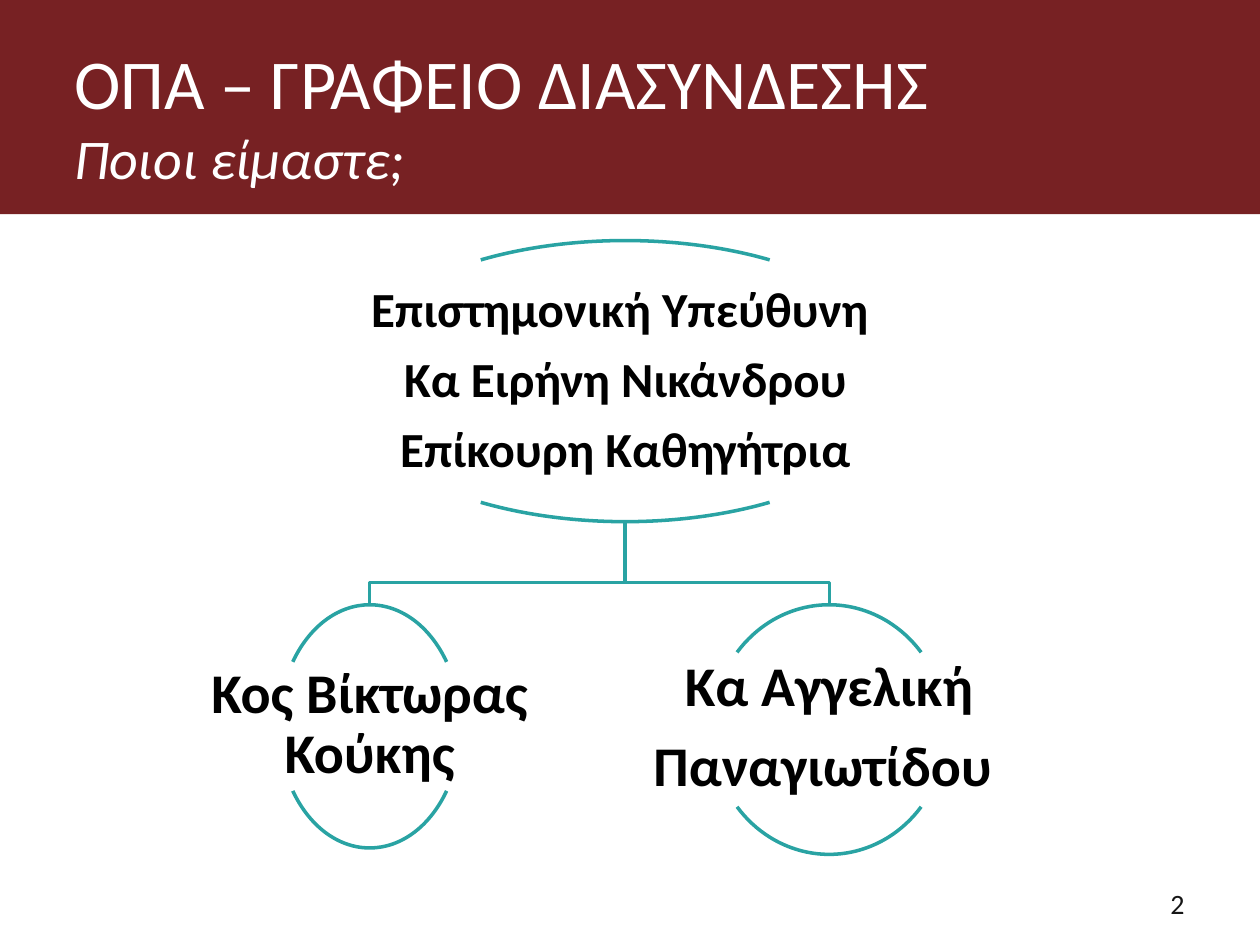
from pptx import Presentation
from pptx.dml.color import RGBColor
from pptx.enum import shapes, text
from pptx.util import Pt

COLORS = {"banner": "772123", "title": "FFFFFF", "chart": "29A3A3",
          "name": "000000", "number": "161616"}
FONT = "Calibri"

# Content: heading runs as (text, size, italic)
HEADING = [("ΟΠΑ – ΓΡΑΦΕΙΟ ΔΙΑΣΥΝΔΕΣΗΣ", 40, False), ("Ποιοι είμαστε;", 32, True)]
PAGE = "2"

# People: centre x, then (top, width, height) of the oval and of its label
HEAD = {"lines": ["Επιστημονική Υπεύθυνη ", "Κα Ειρήνη Νικάνδρου", "Επίκουρη Καθηγήτρια"],
        "size": 28, "center": 357.3, "oval": (137.5, 326.2, 160.6), "label": (166.3, 652.3, 103)}
STAFF = [
    {"lines": ["Κος Βίκτωρας Κούκης"],
     "size": 32, "center": 211.3, "oval": (345.6, 103.7, 139), "label": (370.1, 207.4, 88.6)},
    {"lines": ["Κα Αγγελική", "Παναγιωτίδου "],
     "size": 32, "center": 473.8, "oval": (345.6, 133.9, 142.6), "label": (370.8, 267.8, 90.7)},
]
FORK_Y = 332.6
ARCS = [(132, 192), (24, 84)]  # top and bottom, in units of 100000/60000 degree


def color(key):
    return RGBColor.from_string(COLORS[key])


def add_run(paragraph, words, size, key, bold=False, italic=False):
    run = paragraph.add_run()
    run.text = words
    font = run.font
    font.name, font.size, font.bold, font.italic = FONT, Pt(size), bold, italic
    font.color.rgb = color(key)


def outline_only(part):
    part.fill.background()
    part.line.color.rgb = color("chart")
    part.line.width = Pt(2)
    part.shadow.inherit = False


def centered(center, frame):
    top, width, height = frame
    return [Pt(v) for v in (center - width / 2, top, width, height)]


def add_branch(slide, person):
    """Draw the bent line from the head's oval to one member of staff."""
    start_y = HEAD["oval"][0] + HEAD["oval"][2]
    builder = slide.shapes.build_freeform(HEAD["center"], start_y, scale=Pt(1))
    builder.add_line_segments([(HEAD["center"], FORK_Y), (person["center"], FORK_Y),
                               (person["center"], person["oval"][0])], close=False)
    outline_only(builder.convert_to_shape())


def add_person(slide, person):
    for angles in ARCS:
        arc = slide.shapes.add_shape(shapes.MSO_SHAPE.ARC,
                                     *centered(person["center"], person["oval"]))
        arc.adjustments[0], arc.adjustments[1] = angles
        outline_only(arc)
    label = slide.shapes.add_textbox(*centered(person["center"], person["label"])).text_frame
    label.word_wrap = True
    label.vertical_anchor = text.MSO_ANCHOR.MIDDLE
    label.margin_left = label.margin_right = label.margin_top = label.margin_bottom = Pt(1.4)
    for i, line in enumerate(person["lines"]):
        paragraph = label.paragraphs[0] if i == 0 else label.add_paragraph()
        paragraph.alignment = text.PP_ALIGN.CENTER
        paragraph.line_spacing = 0.9
        paragraph.space_after = Pt(0.35 * person["size"])
        add_run(paragraph, line, person["size"], "name", bold=True)


def main():
    prs = Presentation()
    prs.slide_width, prs.slide_height = Pt(720), Pt(540)
    slide = prs.slides.add_slide(prs.slide_layouts[5])

    # Banner, behind the title
    banner = slide.shapes.add_shape(shapes.MSO_SHAPE.RECTANGLE,
                                    Pt(-0.7), Pt(-1.4), Pt(720.7), Pt(123.8))
    banner.fill.solid()
    banner.fill.fore_color.rgb = color("banner")
    banner.line.fill.background()
    banner.shadow.inherit = False
    slide.shapes.title._element.addprevious(banner._element)

    # Title
    title = slide.shapes.title
    title.left, title.top, title.width, title.height = Pt(35.3), Pt(11.5), Pt(625), Pt(108.7)
    frame = title.text_frame
    frame.auto_size = text.MSO_AUTO_SIZE.NONE
    frame.vertical_anchor = text.MSO_ANCHOR.MIDDLE
    heading = frame.paragraphs[0]
    heading.alignment = text.PP_ALIGN.LEFT
    for i, (words, size, italic) in enumerate(HEADING):
        if i:
            heading.add_line_break()
        add_run(heading, words, size, "title", italic=italic)

    # Page number
    number = slide.shapes.add_textbox(Pt(516.2), Pt(491.8), Pt(167.8), Pt(37.4)).text_frame
    number.word_wrap = True
    number.vertical_anchor = text.MSO_ANCHOR.BOTTOM
    number.paragraphs[0].alignment = text.PP_ALIGN.RIGHT
    add_run(number.paragraphs[0], PAGE, 16, "number")

    # Organisation chart
    for person in STAFF:
        add_branch(slide, person)
    for person in [HEAD, *STAFF]:
        add_person(slide, person)

    prs.save("out.pptx")


if __name__ == "__main__":
    main()
